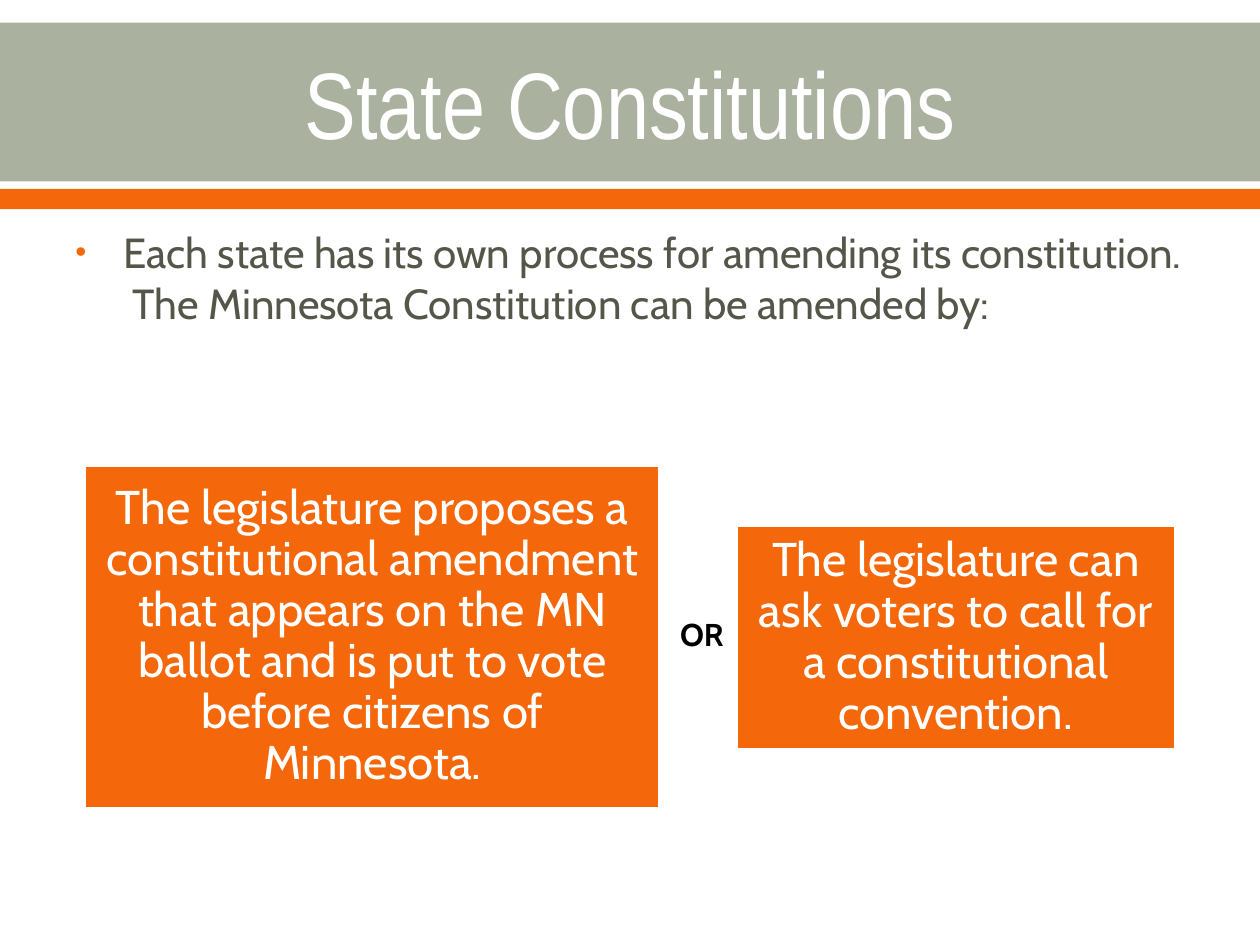
import pptx
import pptx.dml.color
import pptx.enum.shapes
import pptx.enum.text
import pptx.util
from lxml import etree

COLORS = {"sage": "ABB19F", "orange": "F4680B", "white": "FFFFFF", "text": "55554A", "black": "000000"}
ALIGN = pptx.enum.text.PP_ALIGN
ANCHOR = pptx.enum.text.MSO_ANCHOR


class SlideBuilder:
    """Draws styled elements on a slide divided into 100 columns and 75 rows."""

    columns, rows = 100, 75
    font = "Cabin"

    def __init__(self, deck):
        self.deck = deck
        self.page = deck.slides.add_slide(deck.slide_layouts[6])

    def place(self, left, top, width, height):
        column = self.deck.slide_width / self.columns
        row = self.deck.slide_height / self.rows
        return [round(value) for value in (left * column, top * row, width * column, height * row)]

    def color(self, name):
        return pptx.dml.color.RGBColor.from_string(COLORS[name])

    def apply(self, target, values):
        for name, value in values.items():
            setattr(target, name, value)

    def block(self, area, fill, line=None):
        kind = pptx.enum.shapes.MSO_SHAPE.RECTANGLE
        box = self.page.shapes.add_shape(kind, *self.place(*area))
        box.shadow.inherit = False
        box.fill.solid()
        box.fill.fore_color.rgb = self.color(fill)
        if line:
            box.line.color.rgb = self.color(line)
            box.line.width = pptx.util.Pt(2.22)
        else:
            box.line.fill.background()
        return box

    def label(self, area, words, **style):
        box = self.page.shapes.add_textbox(*self.place(*area))
        return self.set_words(box, words, **style)

    def set_words(self, box, words, size, color, font=font, bold=False, frame=None, layout=None):
        self.apply(box.text_frame, {"word_wrap": True, **(frame or {})})
        para = box.text_frame.paragraphs[0]
        self.apply(para, {"alignment": ALIGN.CENTER, **(layout or {})})
        span = para.add_run()
        span.text = words
        self.apply(span.font, {"name": font, "size": pptx.util.Pt(size), "bold": bold})
        span.font.color.rgb = self.color(color)
        return para

    def bullet(self, area, words, **style):
        para = self.label(area, words, layout={"alignment": ALIGN.LEFT, "space_before": pptx.util.Pt(4.8)}, **style)
        settings = para._p.get_or_add_pPr()
        indent = pptx.util.Inches(0.38)
        settings.set("marL", str(indent))
        settings.set("indent", str(-indent))
        space = 'xmlns:a="http://schemas.openxmlformats.org/drawingml/2006/main"'
        for element in (
            f'<a:buClr {space}><a:srgbClr val="{COLORS["orange"]}"/></a:buClr>',
            f'<a:buSzPct {space} val="75000"/>',
            f'<a:buFont {space} typeface="Arial"/>',
            f'<a:buChar {space} char="•"/>',
        ):
            settings.append(etree.fromstring(element))

    def option(self, area, words):
        box = self.block(area, "orange", line="white")
        margin = pptx.util.Inches(0.11)
        frame = {f"margin_{side}": margin for side in ("left", "top", "right", "bottom")}
        frame["vertical_anchor"] = ANCHOR.MIDDLE
        self.set_words(box, words, size=27, color="white", frame=frame, layout={"line_spacing": 0.9})


def main():
    deck = pptx.Presentation()
    deck.slide_width, deck.slide_height = pptx.util.Inches(10), pptx.util.Inches(7.5)
    slide = SlideBuilder(deck)

    slide.block((0, 1.8, 100, 12.6), "sage")
    slide.block((0, 15, 100, 1.6), "orange")
    slide.label((5, 2, 90, 12.2), "State Constitutions", size=54, color="white",
                font="Arial Narrow", frame={"vertical_anchor": ANCHOR.MIDDLE})
    slide.bullet((5, 17.5, 90, 49.5),
                 "Each state has its own process for amending its constitution.  "
                 "The Minnesota Constitution can be amended by:", size=24, color="text")

    slide.option((6.7, 36.9, 45.7, 27.3),
                 "The legislature proposes a constitutional amendment that appears on the MN ballot "
                 "and is put to vote before citizens of Minnesota.")
    slide.option((58.4, 41.7, 34.9, 17.8),
                 "The legislature can ask voters to call for a constitutional convention.")
    slide.label((52.8, 48.3, 5.8, 4), "OR", size=18, color="black", bold=True)

    deck.save("out.pptx")


if __name__ == "__main__":
    main()
